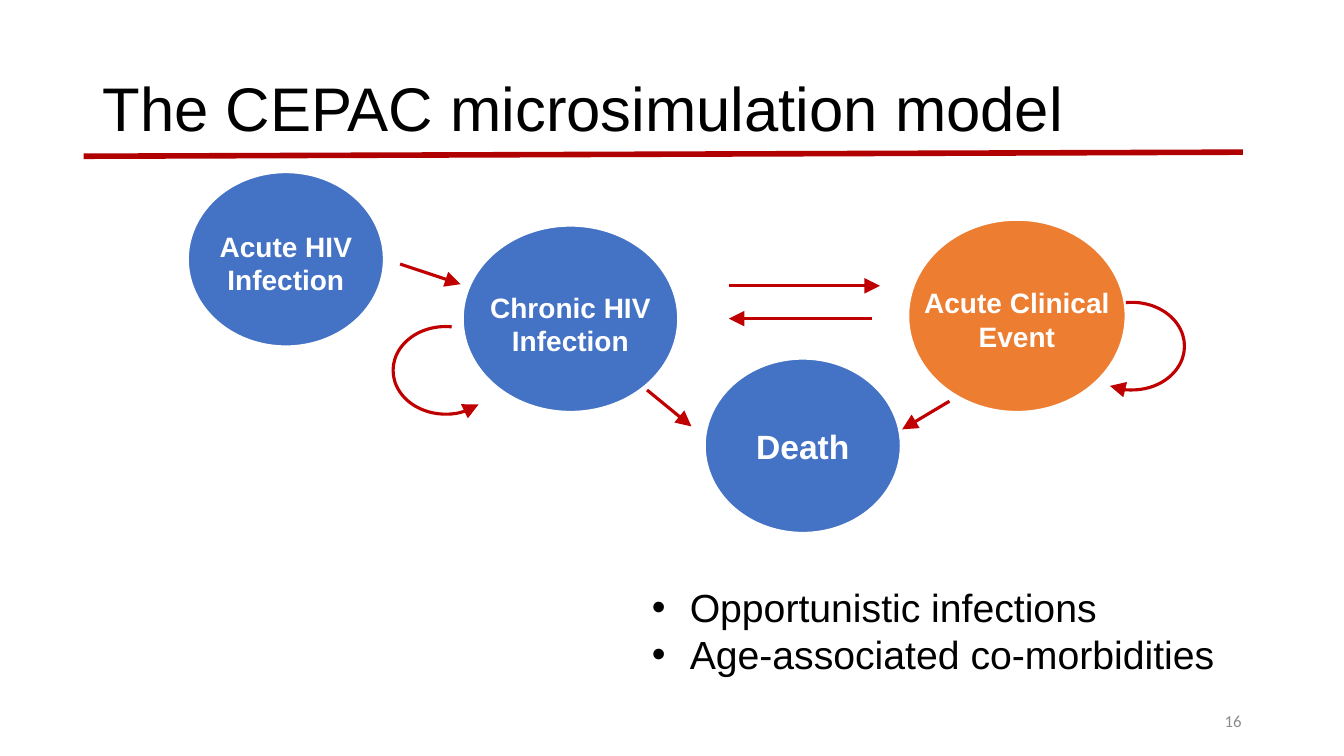
"""Build the microsimulation model slide with its health states and transitions."""
from dataclasses import dataclass
from lxml.etree import SubElement
from pptx import Presentation
from pptx.dml.color import RGBColor as RGB
from pptx.enum.shapes import MSO_CONNECTOR as Link, MSO_SHAPE as Kind
from pptx.enum.text import MSO_ANCHOR as Anchor, MSO_AUTO_SIZE as Fit, PP_ALIGN as Align
from pptx.oxml.ns import qn
from pptx.util import Pt


@dataclass(frozen=True)
class Theme:
    blue: str = "4472C4"
    orange: str = "ED7D31"
    red: str = "C00000"
    rule: str = "B00000"
    white: str = "FFFFFF"
    black: str = "000000"
    gray: str = "8C8C8C"
    font: str = "Arial"
    foot: str = "Calibri"
    head: int = 44
    body: int = 28
    large: int = 24
    label: int = 20
    small: int = 12


T = Theme()
WIDE, HIGH = 960, 540
TITLE = ("The CEPAC microsimulation model", (66, 29, 828, 104.4))
PAGE = ("16", (678, 500.4, 216, 28.8))
NOTES = (["Opportunistic infections", "Age-associated co-morbidities"],
         (458.6, 413.3, 432.7, 133))
RULE = (59.8, 111.6, 887.8, 108.7)
STATES = [
    (["Acute Clinical", "Event"], (648, 156.2, 156.8, 138.8), T.orange, T.label, 5),
    (["Death"], (502.6, 255.4, 141.6, 126), T.blue, T.large, 0),
    (["Acute HIV", "Infection"], (133.4, 122.2, 141.6, 126), T.blue, T.label, 5),
    (["Chronic HIV", "Infection"], (329.8, 160.4, 155.4, 134.6), T.blue, T.label, 7),
]
ARROWS = [
    (520.6, 204.2, 628.6, 204.2),
    (622.8, 227.6, 520.6, 227.6),
    (678.2, 286.6, 644.4, 306.7),
    (285.8, 188.6, 329, 203),
    (462.2, 278.6, 493.9, 304.6),
]
LOOPS = [
    ((280.8, 233.3, 75, 62.6), 46, 278, "headEnd"),
    ((771.1, 216, 75, 62.6), 262, 119, "tailEnd"),
]


def pts(box):
    return [Pt(n) for n in box]


def write(frame, lines, size, color, font=T.font, align=Align.LEFT, bold=False):
    frame.auto_size = Fit.NONE
    for i, line in enumerate(lines):
        para = frame.paragraphs[0] if i == 0 else frame.add_paragraph()
        para.text, para.alignment = line, align
        para.font.name, para.font.size, para.font.bold = font, Pt(size), bold
        para.font.color.rgb = RGB.from_string(color)


def stroke(shape, color, width, end=None):
    shape.line.color.rgb = RGB.from_string(color)
    shape.line.width = Pt(width)
    if end:
        edge = shape.line._get_or_add_ln()
        SubElement(edge, qn(f"a:{end}"), type="triangle", w="lg", len="lg")


def link(tree, ends, color, width, end=None):
    line = tree.add_connector(Link.STRAIGHT, *pts(ends))
    stroke(line, color, width, end)
    SubElement(line._element.spPr, qn("a:effectLst"))


def state(tree, lines, box, color, size, drop):
    oval = tree.add_shape(Kind.OVAL, *pts(box))
    oval.shadow.inherit = False
    oval.fill.solid()
    oval.fill.fore_color.rgb = RGB.from_string(color)
    stroke(oval, T.white, 3)
    frame = oval.text_frame
    frame.word_wrap, frame.vertical_anchor = False, Anchor.MIDDLE
    frame.margin_left = frame.margin_right = frame.margin_bottom = 0
    frame.margin_top = Pt(drop)
    write(frame, lines, size, T.white, align=Align.CENTER, bold=True)


def loop(tree, box, start, stop, end):
    arc = tree.add_shape(Kind.ARC, *pts(box))
    arc.shadow.inherit = False
    arc.fill.background()
    for i, angle in enumerate((start, stop)):
        arc.adjustments[i] = angle * 0.6
    stroke(arc, T.red, 2.25, end)


def text(tree, lines, box, *look, anchor=Anchor.TOP):
    frame = tree.add_textbox(*pts(box)).text_frame
    frame.word_wrap, frame.vertical_anchor = True, anchor
    write(frame, lines, *look)
    return frame


def bullet(para):
    props = para._p.get_or_add_pPr()
    props.set("marL", str(Pt(27)))
    props.set("indent", str(-Pt(27)))
    SubElement(props, qn("a:buFont"), typeface=T.font)
    SubElement(props, qn("a:buChar"), char="•")


def main():
    deck = Presentation()
    deck.slide_width, deck.slide_height = Pt(WIDE), Pt(HIGH)
    slide = deck.slides.add_slide(deck.slide_layouts[5])
    tree = slide.shapes

    head = tree.title
    line, box = TITLE
    head.left, head.top, head.width, head.height = pts(box)
    head.text_frame.vertical_anchor = Anchor.MIDDLE
    write(head.text_frame, [line], T.head, T.black)
    head.text_frame.paragraphs[0].line_spacing = 0.8

    for item in STATES:
        state(tree, *item)
    for ends in ARROWS:
        link(tree, ends, T.red, 2.25, "tailEnd")
    for item in LOOPS:
        loop(tree, *item)
    link(tree, RULE, T.rule, 4)

    lines, box = NOTES
    for para in text(tree, lines, box, T.body, T.black).paragraphs:
        bullet(para)
    line, box = PAGE
    text(tree, [line], box, T.small, T.gray, T.foot, Align.RIGHT, anchor=Anchor.MIDDLE)
    deck.save("out.pptx")


if __name__ == "__main__":
    main()
